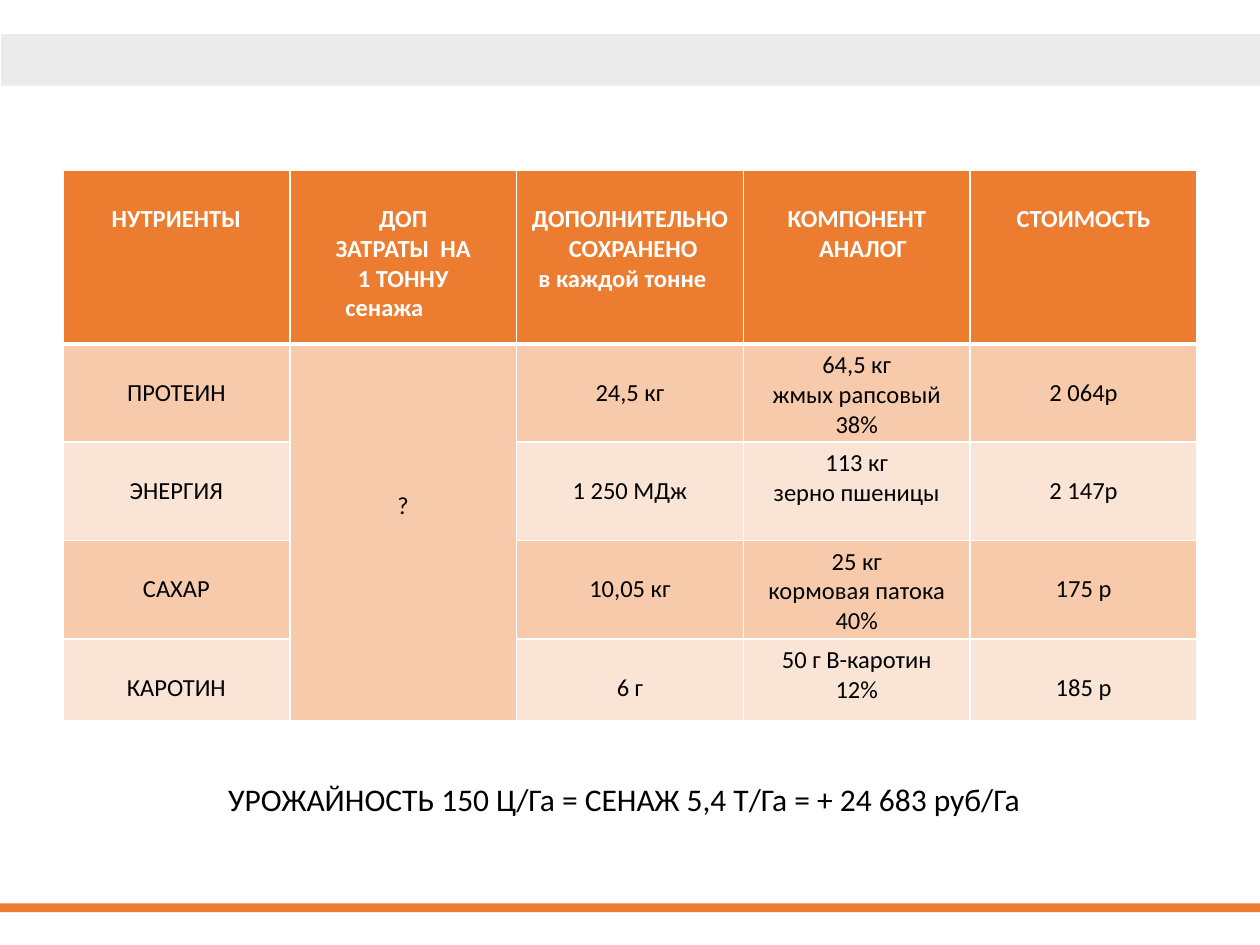
"""Build a slide with a table of nutrients saved per tonne of haylage."""
from dataclasses import dataclass

from lxml.etree import SubElement
from pptx import Presentation
from pptx.dml.color import RGBColor
from pptx.enum.shapes import MSO_SHAPE as Shape
from pptx.enum.text import PP_ALIGN as Align
from pptx.oxml.ns import qn
from pptx.util import Inches, Pt

ORANGE = RGBColor(0xEC, 0x7C, 0x30)
PEACH = RGBColor(0xF8, 0xCA, 0xAC)
CREAM = RGBColor(0xFA, 0xE4, 0xD5)
GRAY = RGBColor(0xEB, 0xEB, 0xEB)
WHITE = RGBColor(0xFF, 0xFF, 0xFF)
BLACK = RGBColor(0, 0, 0)

FONT = "Calibri"
ROW_HEIGHTS = (1.38, 0.78, 0.78, 0.78, 0.65)
COLUMN_WIDTH = 1.8
LINE_TOP = 0.27
COMPONENT_TOP = 0.05
MERGED_TOP = 1.17
COST_COLUMN, COMPONENT_COLUMN = 1, 3


@dataclass
class Band:
    """A plain strip across the slide."""
    left: float
    top: float
    height: float
    color: RGBColor


@dataclass
class Line:
    """One centred line, with the margins that move it sideways."""
    text: str
    left: float = 0
    right: float = 0


BANDS = (Band(0.01, 0.27, 0.41, GRAY), Band(0, 7.17, 0.07, ORANGE))

HEADERS = (
    (Line("НУТРИЕНТЫ"),),
    (Line("ДОП"), Line("ЗАТРАТЫ  НА"), Line("1 ТОННУ"), Line("сенажа", right=0.3)),
    (Line("ДОПОЛНИТЕЛЬНО"), Line("СОХРАНЕНО", left=0.05),
     Line("в каждой тонне", right=0.12)),
    (Line("КОМПОНЕНТ"), Line("АНАЛОГ", left=0.1)),
    (Line("СТОИМОСТЬ"),),
)

NUTRIENTS = (
    ("ПРОТЕИН", "?", "24,5 кг", "64,5 кг\nжмых рапсовый\n38%", "2 064р"),
    ("ЭНЕРГИЯ", "", "1 250 МДж", "113 кг\nзерно пшеницы", "2 147р"),
    ("САХАР", "", "10,05 кг", "25 кг\nкормовая патока\n40%", "175 р"),
    ("КАРОТИН", "", "6 г", "50 г B-каротин\n12%", "185 р"),
)


def add_band(slide, band: Band) -> None:
    """Draw a strip from its left edge to the right edge of the slide."""
    shape = slide.shapes.add_shape(
        Shape.RECTANGLE, Inches(band.left), Inches(band.top),
        Inches(10 - band.left), Inches(band.height))
    shape.shadow.inherit = False
    shape.fill.solid()
    shape.fill.fore_color.rgb = band.color
    shape.line.fill.background()


def style_paragraph(paragraph, size: float, color: RGBColor, bold: bool = False) -> None:
    """Centre a paragraph and set its font."""
    paragraph.alignment = Align.CENTER
    font = paragraph.font
    font.name, font.size, font.bold = FONT, Pt(size), bold
    font.color.rgb = color


def add_border(cell, side: str, width: float) -> None:
    """Give one side of a cell a white line."""
    line = SubElement(cell._tc.get_or_add_tcPr(), qn(f"a:ln{side}"), w=str(Pt(width)))
    fill = SubElement(line, qn("a:solidFill"))
    SubElement(fill, qn("a:srgbClr"), val=str(WHITE))


def fill_cell(cell, lines: tuple[Line, ...], top: float, fill: RGBColor,
              color: RGBColor, bold: bool, borders: dict[str, float]) -> None:
    """Set the borders, fill and text of a cell."""
    for side, width in borders.items():
        add_border(cell, side, width)
    cell.fill.solid()
    cell.fill.fore_color.rgb = fill
    cell.margin_left = cell.margin_right = cell.margin_bottom = 0
    cell.margin_top = Inches(top)
    frame = cell.text_frame
    frame.text = "\n".join(line.text for line in lines)
    for paragraph, line in zip(frame.paragraphs, lines):
        style_paragraph(paragraph, 14, color, bold)
        properties = paragraph._p.get_or_add_pPr()
        properties.set("marL", str(Inches(line.left)))
        properties.set("marR", str(Inches(line.right)))


def add_nutrient_table(slide) -> None:
    """Draw the header row and one row per nutrient."""
    table = slide.shapes.add_table(
        len(ROW_HEIGHTS), len(HEADERS), Inches(0.5), Inches(1.35),
        Inches(COLUMN_WIDTH * len(HEADERS)), Inches(sum(ROW_HEIGHTS))).table
    table.first_row = table.horz_banding = False
    for column in table.columns:
        column.width = Inches(COLUMN_WIDTH)
    for row, height in zip(table.rows, ROW_HEIGHTS):
        row.height = Inches(height)

    for column, lines in enumerate(HEADERS):
        fill_cell(table.cell(0, column), lines, LINE_TOP, ORANGE, WHITE, True,
                  {"L": 1, "R": 1, "T": 1, "B": 3})
    tops = {COST_COLUMN: MERGED_TOP, COMPONENT_COLUMN: COMPONENT_TOP}
    for row, texts in enumerate(NUTRIENTS, start=1):
        borders = {"L": 1, "R": 1, "T": 3 if row == 1 else 1, "B": 1}
        for column, text in enumerate(texts):
            lines = tuple(Line(part) for part in text.split("\n"))
            top = tops.get(column, LINE_TOP) if text else 0
            fill_cell(table.cell(row, column), lines, top,
                      PEACH if row % 2 else CREAM, BLACK, False, borders)
    table.cell(1, COST_COLUMN).merge(table.cell(len(NUTRIENTS), COST_COLUMN))


def add_summary(slide) -> None:
    """Write the yield summary below the table."""
    frame = slide.shapes.add_textbox(
        Inches(1.8), Inches(6.17), Inches(6.31), Inches(0.33)).text_frame
    frame.word_wrap = True
    frame.margin_left = frame.margin_right = frame.margin_bottom = 0
    frame.margin_top = Inches(0.02)
    frame.text = "УРОЖАЙНОСТЬ 150 Ц/Га = СЕНАЖ 5,4 Т/Га = + 24 683 руб/Га"
    style_paragraph(frame.paragraphs[0], 18, BLACK)


def main() -> None:
    """Build and save the presentation."""
    presentation = Presentation()
    presentation.slide_width, presentation.slide_height = Inches(10), Inches(7.5)
    slide = presentation.slides.add_slide(presentation.slide_layouts[6])
    for band in BANDS:
        add_band(slide, band)
    add_nutrient_table(slide)
    add_summary(slide)
    presentation.save("out.pptx")


if __name__ == "__main__":
    main()
